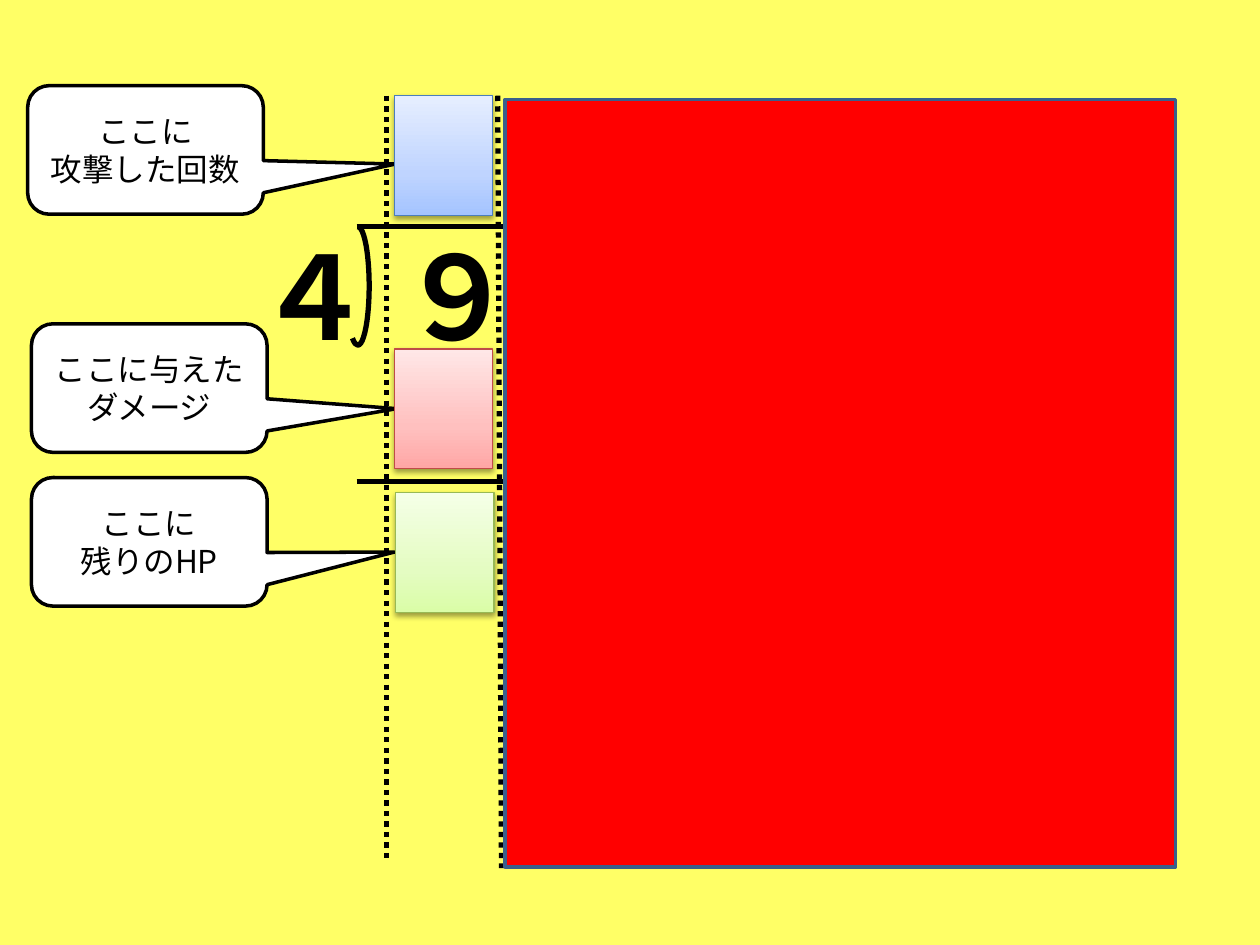
from lxml import etree
from pptx import Presentation
from pptx.dml.color import RGBColor
from pptx.enum.dml import MSO_LINE
from pptx.enum.shapes import MSO_CONNECTOR, MSO_SHAPE
from pptx.enum.text import MSO_ANCHOR, MSO_AUTO_SIZE, PP_ALIGN
from pptx.oxml import parse_xml
from pptx.oxml.ns import nsdecls, qn
from pptx.util import Inches, Pt

YELLOW = RGBColor(0xFF, 0xFF, 0x66)
BLACK = RGBColor(0, 0, 0)
WHITE = RGBColor(0xFF, 0xFF, 0xFF)
RED = RGBColor(0xFF, 0, 0)
NAVY = RGBColor(0x3A, 0x5F, 0x8C)
# Answer boxes: edge, then gradient from bottom to top
BLUE_BOX = (RGBColor(0x4B, 0x7E, 0xBC), "A4C4FF", "BFD4FF", "E6EEFF")
PINK_BOX = (RGBColor(0xBF, 0x4C, 0x48), "FFA6A5", "FFC0BF", "FFE7E7")
GREEN_BOX = (RGBColor(0x98, 0xB9, 0x55), "DAFDA7", "E4FCC2", "F5FFE7")


class Board:
    """Draws the long-division worksheet on one slide."""
    digit_font, label_font = "Calibri", "Noto Sans CJK JP"

    def __init__(self, slide):
        self.slide = slide
        slide.background.fill.solid()
        slide.background.fill.fore_color.rgb = YELLOW

    def set_text(self, tf, lines, size, font, bold=False):
        for i, line in enumerate(lines):
            p = tf.add_paragraph() if i else tf.paragraphs[0]
            p.text = line
            p.alignment = PP_ALIGN.CENTER
            p.font.size = Pt(size)
            p.font.bold = bold
            p.font.color.rgb = BLACK
            p.font.name = font
            props = p._p.pPr.find(qn("a:defRPr"))
            etree.SubElement(props, qn("a:ea")).set("typeface", font)

    def digit(self, x, y, text):
        sp = self.slide.shapes.add_textbox(
            Inches(x), Inches(y), Inches(0.84), Inches(1.21))
        tf = sp.text_frame
        tf.word_wrap = False
        tf.auto_size = MSO_AUTO_SIZE.SHAPE_TO_FIT_TEXT
        self.set_text(tf, [text], 66, self.digit_font, bold=True)

    def line(self, x1, y1, x2, y2, dash=None, parent=None):
        cn = (parent or self.slide).shapes.add_connector(
            MSO_CONNECTOR.STRAIGHT,
            Inches(x1), Inches(y1), Inches(x2), Inches(y2))
        cn.line.color.rgb = BLACK
        cn.line.width = Pt(3)
        if dash:
            cn.line.dash_style = dash
        etree.SubElement(cn._element.spPr, qn("a:effectLst"))

    def shape(self, kind, x, y, w, h, fill, edge, weight, parent=None):
        sp = (parent or self.slide).shapes.add_shape(
            kind, Inches(x), Inches(y), Inches(w), Inches(h))
        sp.shadow.inherit = False
        if fill is None:
            sp.fill.background()
        else:
            sp.fill.solid()
            sp.fill.fore_color.rgb = fill
        sp.line.color.rgb = edge
        sp.line.width = Pt(weight)
        return sp

    def division_sign(self, x, y):
        grp = self.slide.shapes.add_group_shape()
        self.line(x, y, 5.07, y, parent=grp)
        arc = self.shape(MSO_SHAPE.ARC, x - 0.08, y, 0.18, 0.94,
                         None, BLACK, 3, grp)
        arc.adjustments[0], arc.adjustments[1] = 162, 57.5

    def callout(self, x, y, lines, tip):
        sp = self.shape(MSO_SHAPE.ROUNDED_RECTANGULAR_CALLOUT,
                        x, y, 1.87, 1.02, WHITE, BLACK, 2)
        for i, value in enumerate((*tip, 0.167)):
            sp.adjustments[i] = value
        sp.text_frame.word_wrap = True
        sp.text_frame.vertical_anchor = MSO_ANCHOR.MIDDLE
        self.set_text(sp.text_frame, lines, 18, self.label_font)

    def answer_box(self, x, y, colors):
        edge, bottom, middle, top = colors
        sp = self.shape(MSO_SHAPE.RECTANGLE, x, y, 0.78, 0.95,
                        WHITE, edge, 0.75)
        spPr = sp._element.spPr
        stops = "".join(
            f'<a:gs pos="{pos}"><a:srgbClr val="{color}"/></a:gs>'
            for pos, color in ((0, bottom), (35000, middle), (100000, top)))
        spPr.replace(spPr.find(qn("a:solidFill")), parse_xml(
            f'<a:gradFill {nsdecls("a")} rotWithShape="1">'
            f'<a:gsLst>{stops}</a:gsLst>'
            '<a:lin ang="16200000" scaled="1"/></a:gradFill>'))
        spPr.replace(spPr.find(qn("a:effectLst")), parse_xml(
            f'<a:effectLst {nsdecls("a")}><a:outerShdw blurRad="40000" '
            'dist="20000" dir="5400000" rotWithShape="0">'
            '<a:srgbClr val="000000"><a:alpha val="38000"/></a:srgbClr>'
            '</a:outerShdw></a:effectLst>'))


def main():
    prs = Presentation()
    prs.slide_width, prs.slide_height = Inches(10), Inches(7.5)
    board = Board(prs.slides.add_slide(prs.slide_layouts[6]))

    # Division: digits, column guides and rules
    board.digit(3.07, 1.74, "９")
    board.line(3.95, 0.76, 3.98, 6.89, MSO_LINE.ROUND_DOT)
    board.line(2.83, 3.82, 5.07, 3.82)
    board.line(3.07, 0.76, 3.07, 6.84, MSO_LINE.ROUND_DOT)
    board.division_sign(2.83, 1.8)
    board.digit(1.94, 1.74, "４")

    # Cover over the remaining columns
    board.shape(MSO_SHAPE.RECTANGLE, 4.01, 0.79, 5.32, 6.09, RED, NAVY, 2)

    # Hints
    board.callout(0.25, 2.57, ["ここに与えたダメージ"], (1.05, 0.16))
    board.callout(0.22, 0.68, ["ここに", "攻撃した回数"], (1.06, 0.11))
    board.callout(0.25, 3.79, ["ここに", "残りのHP"], (1.04, 0.08))

    # Answer boxes
    board.answer_box(3.13, 0.76, BLUE_BOX)
    board.answer_box(3.13, 2.77, PINK_BOX)
    board.answer_box(3.14, 3.91, GREEN_BOX)

    prs.save("out.pptx")


if __name__ == "__main__":
    main()
